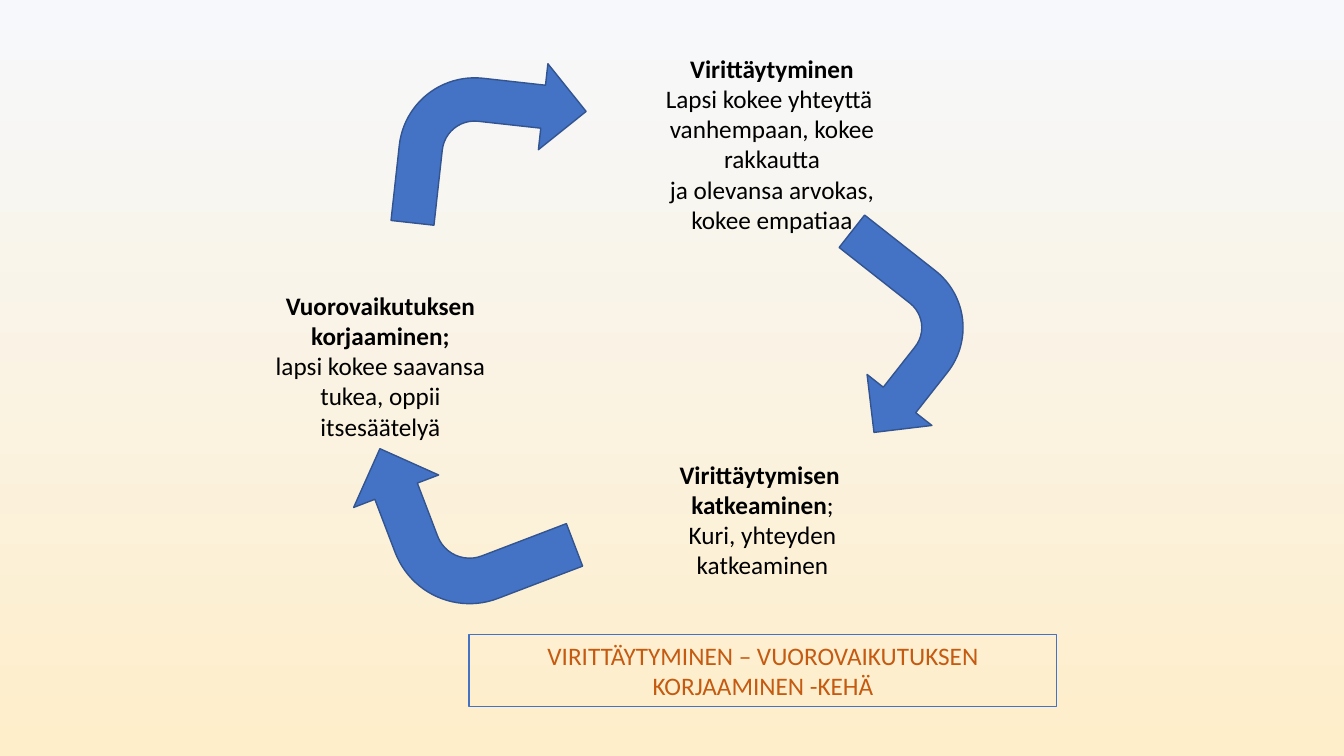
from pptx import Presentation
from pptx.dml.color import RGBColor
from pptx.enum.shapes import MSO_SHAPE
from pptx.enum.text import MSO_ANCHOR, MSO_AUTO_SIZE, PP_ALIGN
from pptx.util import Emu, Pt

COLORS = {
    "sky": "F6F8FC",
    "sand": "FEEECA",
    "arrow": "4472C4",
    "arrow_edge": "325491",
    "caption": "C55A11",
    "text": "000000",
}
PX_PER_INCH = 100.8


def px(*lengths):
    return [Emu(round(length * 914400 / PX_PER_INCH)) for length in lengths]


def write(box, lines, color):
    """Fill a box with centred lines, each a list of (text, bold) spans."""
    frame = box.text_frame
    frame.word_wrap = True
    frame.auto_size = MSO_AUTO_SIZE.SHAPE_TO_FIT_TEXT
    for index, spans in enumerate(lines):
        para = frame.paragraphs[0] if index == 0 else frame.add_paragraph()
        para.alignment = PP_ALIGN.CENTER
        para.font.name = "Calibri"
        para.font.size = Pt(18)
        para.font.color.rgb = RGBColor.from_string(COLORS[color])
        for text, bold in spans:
            span = para.add_run()
            span.text = text
            span.font.bold = bold


deck = Presentation()
deck.slide_width, deck.slide_height = px(1344, 756)
page = deck.slides.add_slide(deck.slide_layouts[6])

# Background fading from top to bottom
backdrop = page.background.fill
backdrop.gradient()
backdrop.gradient_angle = 270
for stop, name in zip(backdrop.gradient_stops, ("sky", "sand")):
    stop.color.rgb = RGBColor.from_string(COLORS[name])

# Arrows of the cycle: place, size and rotation
ARROWS = [
    ((400, 58, 182, 173), 6.3),
    ((803, 245, 165, 183), 128.2),
    ((369, 419, 182, 193), 249.1),
]
for place, angle in ARROWS:
    arrow = page.shapes.add_shape(MSO_SHAPE.BENT_ARROW, *px(*place))
    arrow.rotation = angle
    arrow.shadow.inherit = False
    arrow.fill.solid()
    arrow.fill.fore_color.rgb = RGBColor.from_string(COLORS["arrow"])
    arrow.line.color.rgb = RGBColor.from_string(COLORS["arrow_edge"])
    arrow.line.width = Pt(1)

# Framed caption
caption = page.shapes.add_shape(MSO_SHAPE.RECTANGLE, *px(469, 635, 588, 72))
caption.shadow.inherit = False
caption.fill.background()
caption.line.color.rgb = RGBColor.from_string(COLORS["arrow"])
caption.line.width = Pt(0.75)
caption.text_frame.vertical_anchor = MSO_ANCHOR.TOP
write(caption, [[("VIRITTÄYTYMINEN – VUOROVAIKUTUKSEN KORJAAMINEN -KEHÄ", False)]], "caption")

# Stages of the cycle
STAGES = [
    ((611, 48, 322, 163), [
        [("Virittäytyminen", True)],
        [("Lapsi kokee yhteyttä ", False)],
        [("vanhempaan, kokee rakkautta", False)],
        [("ja olevansa arvokas,", False)],
        [("kokee empatiaa", False)],
    ]),
    ((611, 454, 303, 102), [
        [("Virittäytymisen ", True)],
        [("katkeaminen", True), (";", False)],
        [("Kuri, yhteyden katkeaminen", False)],
    ]),
    ((251, 285, 259, 132), [
        [("Vuorovaikutuksen", True)],
        [("korjaaminen;", True)],
        [("lapsi kokee saavansa", False)],
        [("tukea, oppii itsesäätelyä", False)],
    ]),
]
for place, lines in STAGES:
    write(page.shapes.add_textbox(*px(*place)), lines, "text")

deck.save("out.pptx")
